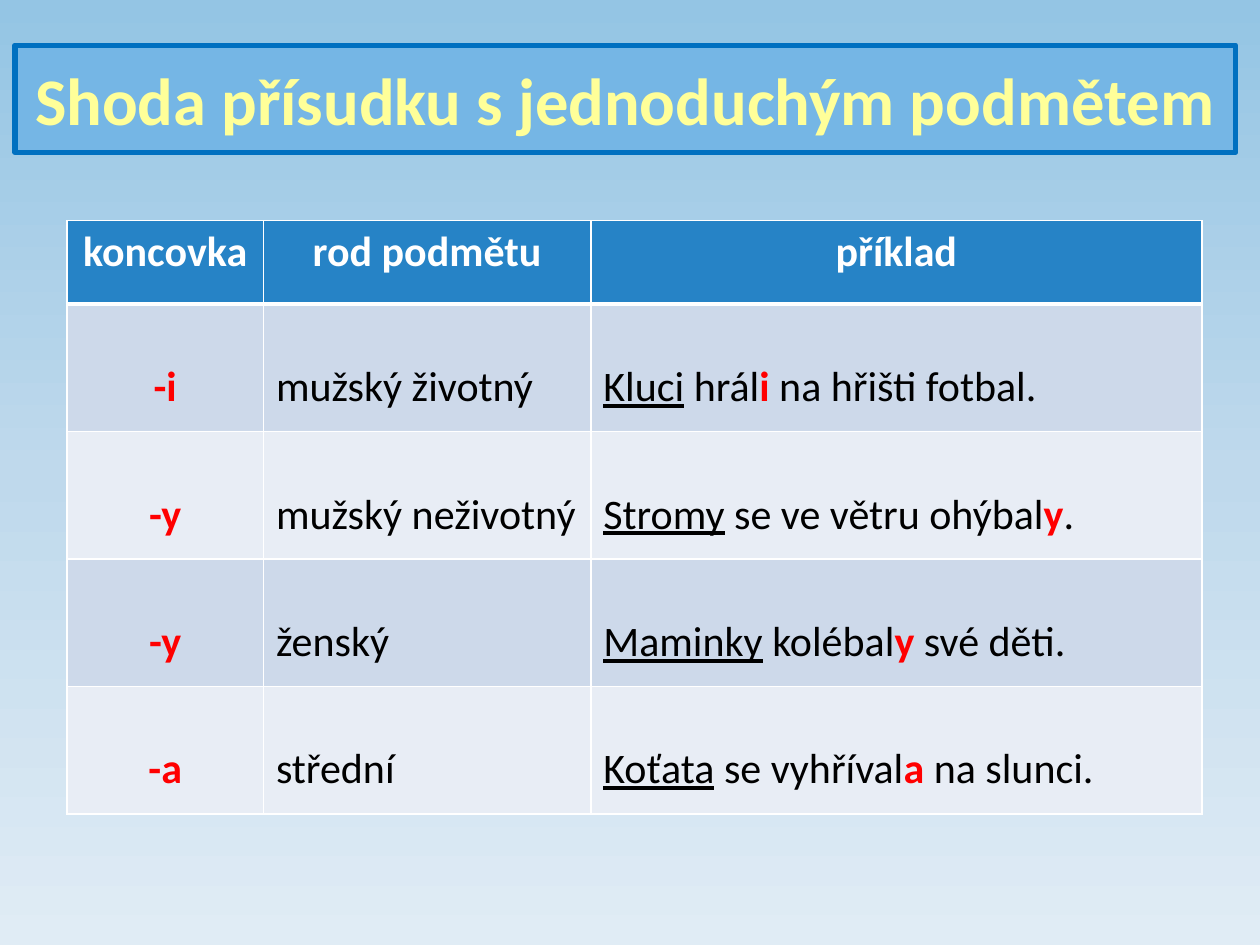
from dataclasses import dataclass

import pptx
import pptx.dml.color
import pptx.dml.fill
import pptx.enum.text
import pptx.oxml
import pptx.oxml.ns
import pptx.presentation
import pptx.slide
import pptx.table
import pptx.text.text
import pptx.util
from pptx.dml.color import RGBColor
from pptx.util import Cm, Pt

FONT = "Calibri"
WHITE = RGBColor(0xFF, 0xFF, 0xFF)
BLACK = RGBColor(0x00, 0x00, 0x00)
RED = RGBColor(0xFF, 0x00, 0x00)
YELLOW = RGBColor(0xFF, 0xFF, 0x99)
TITLE_FILL = RGBColor(0x75, 0xB6, 0xE5)
TITLE_LINE = RGBColor(0x00, 0x70, 0xC0)
HEADER_FILL = RGBColor(0x26, 0x83, 0xC6)
BAND_FILLS = (RGBColor(0xCD, 0xD9, 0xEA), RGBColor(0xE8, 0xED, 0xF5))
SKY_STOPS = {
    0: RGBColor(0x94, 0xC5, 0xE4),
    50: RGBColor(0xBF, 0xD9, 0xEC),
    100: RGBColor(0xE0, 0xEC, 0xF5),
}

HEADINGS = ("koncovka", "rod podmětu", "příklad")
COLUMN_WIDTHS = (Cm(3.96), Cm(6.6), Cm(12.32))
HEADER_HEIGHT, ROW_HEIGHT = Cm(1.68), Cm(2.57)
CENTER = pptx.enum.text.PP_ALIGN.CENTER
LEFT = pptx.enum.text.PP_ALIGN.LEFT


@dataclass(frozen=True)
class Part:
    text: str
    color: RGBColor = BLACK
    bold: bool = False
    underline: bool = False


@dataclass(frozen=True)
class Agreement:
    """One table row; the example is subject + stem + ending + rest."""
    ending: str
    gender: str
    subject: str
    stem: str
    rest: str

    def example(self) -> list[Part]:
        return [
            Part(self.subject, underline=True),
            Part(self.stem),
            Part(self.ending, RED, bold=True),
            Part(self.rest),
        ]


AGREEMENTS = (
    Agreement("i", "mužský životný", "Kluci", " hrál", " na hřišti fotbal."),
    Agreement("y", "mužský neživotný", "Stromy", " se ve větru ohýbal", "."),
    Agreement("y", "ženský", "Maminky", " kolébal", " své děti."),
    Agreement("a", "střední", "Koťata", " se vyhříval", " na slunci."),
)


def write_parts(p: pptx.text.text._Paragraph, parts: list[Part], size: int,
                align: pptx.enum.text.PP_ALIGN) -> None:
    p.alignment = align
    for part in parts:
        r = p.add_run()
        r.text = part.text
        r.font.name = FONT
        r.font.size = Pt(size)
        r.font.bold = part.bold
        r.font.underline = part.underline
        r.font.color.rgb = part.color


def paint_background(s: pptx.slide.Slide) -> None:
    fill = s.background.fill
    fill.gradient()
    fill.gradient_angle = 270
    stops = s.background._cSld.find(".//" + pptx.oxml.ns.qn("a:gsLst"))
    stops.clear()
    for percent, color in SKY_STOPS.items():
        stops.append(pptx.oxml.parse_xml(
            f'<a:gs {pptx.oxml.ns.nsdecls("a")} pos="{percent * 1000}">'
            f'<a:srgbClr val="{color}"/></a:gs>'))


def add_title(s: pptx.slide.Slide, text: str) -> None:
    sp = s.shapes.title
    sp.left, sp.top, sp.width, sp.height = Cm(0.3), Cm(0.91), Cm(24.61), Cm(2.16)
    sp.fill.solid()
    sp.fill.fore_color.rgb = TITLE_FILL
    sp.line.color.rgb = TITLE_LINE
    sp.line.width = Pt(3)
    tf = sp.text_frame
    tf.auto_size = pptx.enum.text.MSO_AUTO_SIZE.NONE
    tf.vertical_anchor = pptx.enum.text.MSO_ANCHOR.MIDDLE
    write_parts(tf.paragraphs[0], [Part(text, YELLOW, bold=True)], 38, CENTER)


def set_borders(cell: pptx.table._Cell, bottom: int) -> None:
    """Draw white cell borders; the widths are in points."""
    tc_pr = cell._tc.get_or_add_tcPr()
    for i, (side, width) in enumerate((("L", 1), ("R", 1), ("T", 1), ("B", bottom))):
        tc_pr.insert(i, pptx.oxml.parse_xml(
            f'<a:ln{side} {pptx.oxml.ns.nsdecls("a")} w="{Pt(width)}"><a:solidFill>'
            f'<a:srgbClr val="{WHITE}"/></a:solidFill></a:ln{side}>'))


def fill_cell(cell: pptx.table._Cell, parts: list[Part], fill: RGBColor,
              align: pptx.enum.text.PP_ALIGN, bottom: int = 1) -> None:
    cell.fill.solid()
    cell.fill.fore_color.rgb = fill
    set_borders(cell, bottom)
    write_parts(cell.text_frame.paragraphs[0], parts, 24, align)


def add_agreement_table(s: pptx.slide.Slide) -> None:
    height = HEADER_HEIGHT + len(AGREEMENTS) * ROW_HEIGHT
    table = s.shapes.add_table(len(AGREEMENTS) + 1, len(HEADINGS), Cm(1.35), Cm(4.45),
                               sum(COLUMN_WIDTHS), height).table
    for column, width in zip(table.columns, COLUMN_WIDTHS):
        column.width = width
    table.rows[0].height = HEADER_HEIGHT
    for col, heading in enumerate(HEADINGS):
        fill_cell(table.cell(0, col), [Part(heading, WHITE, bold=True)],
                  HEADER_FILL, CENTER, bottom=3)

    for row, item in enumerate(AGREEMENTS, start=1):
        table.rows[row].height = ROW_HEIGHT
        contents = (
            ([Part("-" + item.ending, RED, bold=True)], CENTER),
            ([Part(item.gender)], LEFT),
            (item.example(), LEFT),
        )
        for col, (parts, align) in enumerate(contents):
            cell = table.cell(row, col)
            cell.margin_top = Cm(1.16)
            fill_cell(cell, parts, BAND_FILLS[(row - 1) % 2], align,)


def main() -> None:
    prs = pptx.Presentation()
    prs.slide_width, prs.slide_height = Cm(25.4), Cm(19.05)
    s = prs.slides.add_slide(prs.slide_layouts.get_by_name("Title Only"))
    paint_background(s)
    add_title(s, "Shoda přísudku s jednoduchým podmětem")
    add_agreement_table(s)
    prs.save("out.pptx")


if __name__ == "__main__":
    main()
